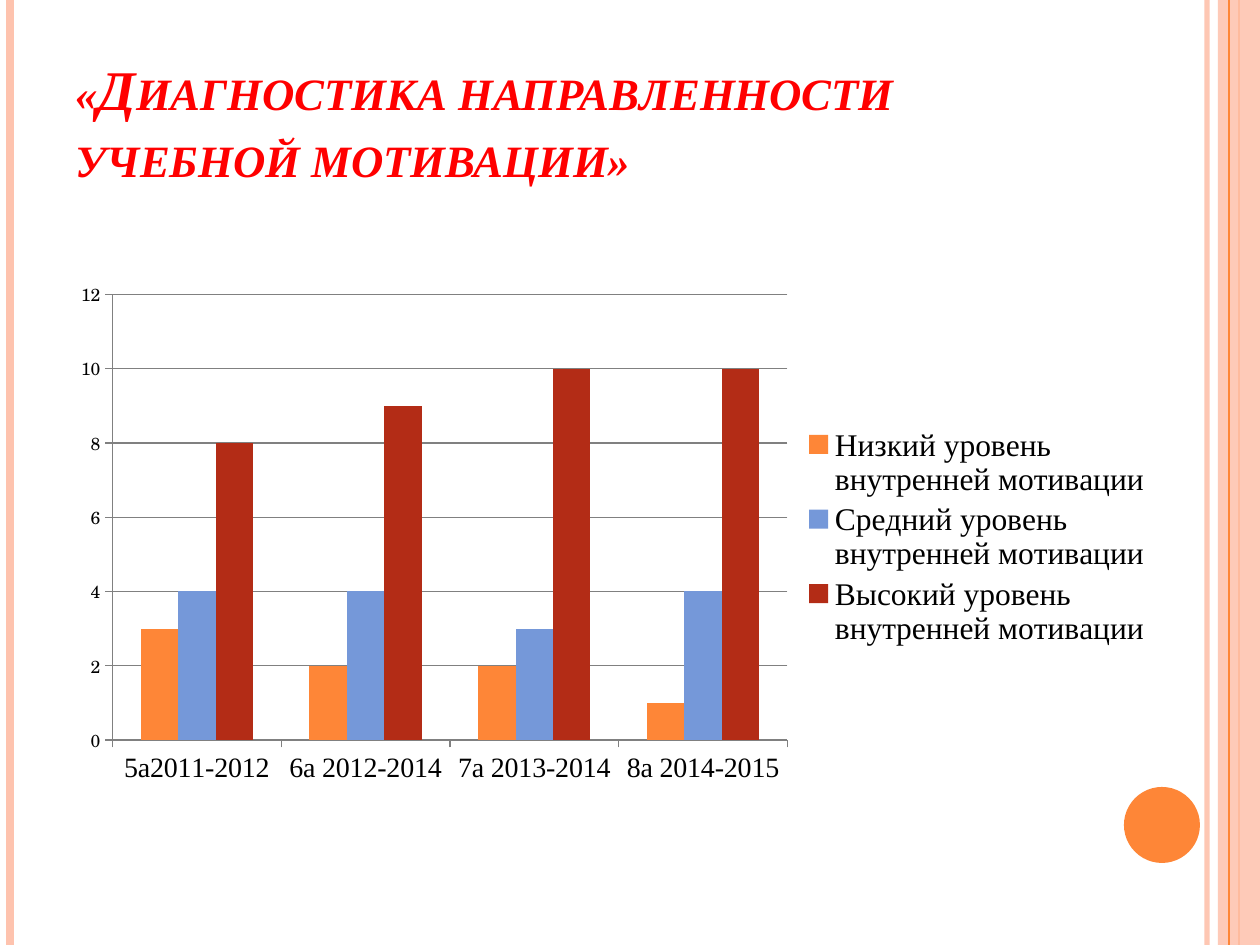
from lxml.etree import SubElement
from pptx import Presentation
from pptx.chart.data import CategoryChartData
from pptx.dml.color import RGBColor
from pptx.enum.chart import XL_CHART_TYPE as Kind, XL_LEGEND_POSITION as Side, XL_TICK_MARK as Tick
from pptx.enum.shapes import MSO_CONNECTOR as Link, MSO_SHAPE as Form
from pptx.enum.text import MSO_ANCHOR as Anchor, MSO_AUTO_SIZE as Fit, PP_ALIGN as Align
from pptx.oxml.ns import qn
from pptx.util import Pt

TITLE = "«Диагностика направленности учебной мотивации»"
YEARS = ["5а2011-2012", "6а 2012-2014", "7а 2013-2014", "8а 2014-2015"]
LEVELS = [
    ("Низкий уровень внутренней мотивации", (3, 2, 2, 1), "FE8637"),
    ("Средний уровень внутренней мотивации", (4, 4, 3, 4), "7598D9"),
    ("Высокий уровень внутренней мотивации", (8, 9, 10, 10), "B32C16"),
]
PLOT = {"x": 0.044, "y": 0.037, "w": 0.613, "h": 0.849}
ORANGE, PEACH, GREY = "FE8637", "FEC3AE", "808080"
SERIF, BOOK = "Times New Roman", "TeX Gyre Schola"
WIDE, HIGH = 1260, 945
# x in px, colour, width in points, opacity in percent
BACK = [(1207, PEACH, 3, 93), (10, PEACH, 4.5, 100), (1239, ORANGE, 1.5, 100)]
FRONT = [(1229, ORANGE, 0.75, 100)]


def px(n):
    return round(n * 914400 / 126)


def box(*sides):
    return [px(n) for n in sides]


def rgb(code):
    return RGBColor.from_string(code)


def fade(part, percent):
    """Set the opacity of the solid colour inside an XML part."""
    if percent < 100:
        tint = next(part.iter(qn("a:srgbClr")))
        SubElement(tint, qn("a:alpha")).set("val", str(percent * 1000))


def stripe(slide, x, color, width, percent):
    line = slide.shapes.add_connector(Link.STRAIGHT, *box(x, 0, x, HIGH))
    line.line.color.rgb = rgb(color)
    line.line.width = Pt(width)
    props = line._element.spPr
    fade(props, percent)
    SubElement(props, qn("a:effectLst"))


def solid(slide, form, sides, color, percent=100):
    shape = slide.shapes.add_shape(form, *box(*sides))
    shape.shadow.inherit = False
    shape.fill.solid()
    shape.fill.fore_color.rgb = rgb(color)
    shape.line.fill.background()
    fade(shape._element.spPr, percent)


def style(font, name, size, color="000000"):
    font.name, font.size = name, Pt(size)
    font.color.rgb = rgb(color)


def head(slide):
    title = slide.shapes.title
    title.left, title.top, title.width, title.height = box(63, 38, 1029, 157)
    frame = title.text_frame
    frame.text = TITLE
    frame.word_wrap = True
    frame.auto_size = Fit.NONE
    frame.vertical_anchor = Anchor.BOTTOM
    para = frame.paragraphs[0]
    para.alignment = Align.LEFT
    style(para.font, SERIF, 32, "FF0000")
    para.font.bold = para.font.italic = True
    para.runs[0]._r.get_or_add_rPr().set("cap", "small")


def place(chart):
    """Fix the inner plot area as fractions of the chart."""
    area = chart._chartSpace.chart.plotArea
    for old in area.findall(qn("c:layout")):
        area.remove(old)
    layout = SubElement(area, qn("c:layout"))
    area.insert(0, layout)
    manual = SubElement(layout, qn("c:manualLayout"))
    rules = {"layoutTarget": "inner", "xMode": "edge", "yMode": "edge", **PLOT}
    for key, val in rules.items():
        SubElement(manual, qn("c:" + key)).set("val", str(val))


def graph(slide):
    data = CategoryChartData()
    data.categories = YEARS
    for name, vals, _ in LEVELS:
        data.add_series(name, vals)
    chart = slide.shapes.add_chart(
        Kind.COLUMN_CLUSTERED, *box(64, 275, 1101, 525), data).chart
    chart.has_title = False
    style(chart.font, BOOK, 10)
    plot = chart.plots[0]
    plot.gap_width, plot.overlap, plot.vary_by_categories = 150, 0, False
    for bars, (_, _, color) in zip(plot.series, LEVELS):
        bars.format.fill.solid()
        bars.format.fill.fore_color.rgb = rgb(color)
    cats, vals = chart.category_axis, chart.value_axis
    vals.minimum_scale, vals.maximum_scale, vals.major_unit = 0, 12, 2
    vals.has_major_gridlines = True
    for axis in (cats, vals):
        axis.major_tick_mark = Tick.OUTSIDE
        axis.minor_tick_mark = Tick.NONE
    for part in (cats, vals, vals.major_gridlines):
        part.format.line.color.rgb = rgb(GREY)
        part.format.line.width = Pt(0.75)
    style(cats.tick_labels.font, SERIF, 16)
    chart.has_legend = True
    chart.legend.position = Side.RIGHT
    chart.legend.include_in_layout = False
    style(chart.legend.font, SERIF, 18)
    place(chart)


def main():
    deck = Presentation()
    deck.slide_width, deck.slide_height = box(WIDE, HIGH)
    slide = deck.slides.add_slide(deck.slide_layouts[5])
    for item in BACK:
        stripe(slide, *item)
    solid(slide, Form.RECTANGLE, (1218, 0, 42, HIGH), PEACH, 87)
    for item in FRONT:
        stripe(slide, *item)
    solid(slide, Form.OVAL, (1124, 787, 76, 76), ORANGE)
    head(slide)
    graph(slide)
    deck.save("out.pptx")


if __name__ == "__main__":
    main()
